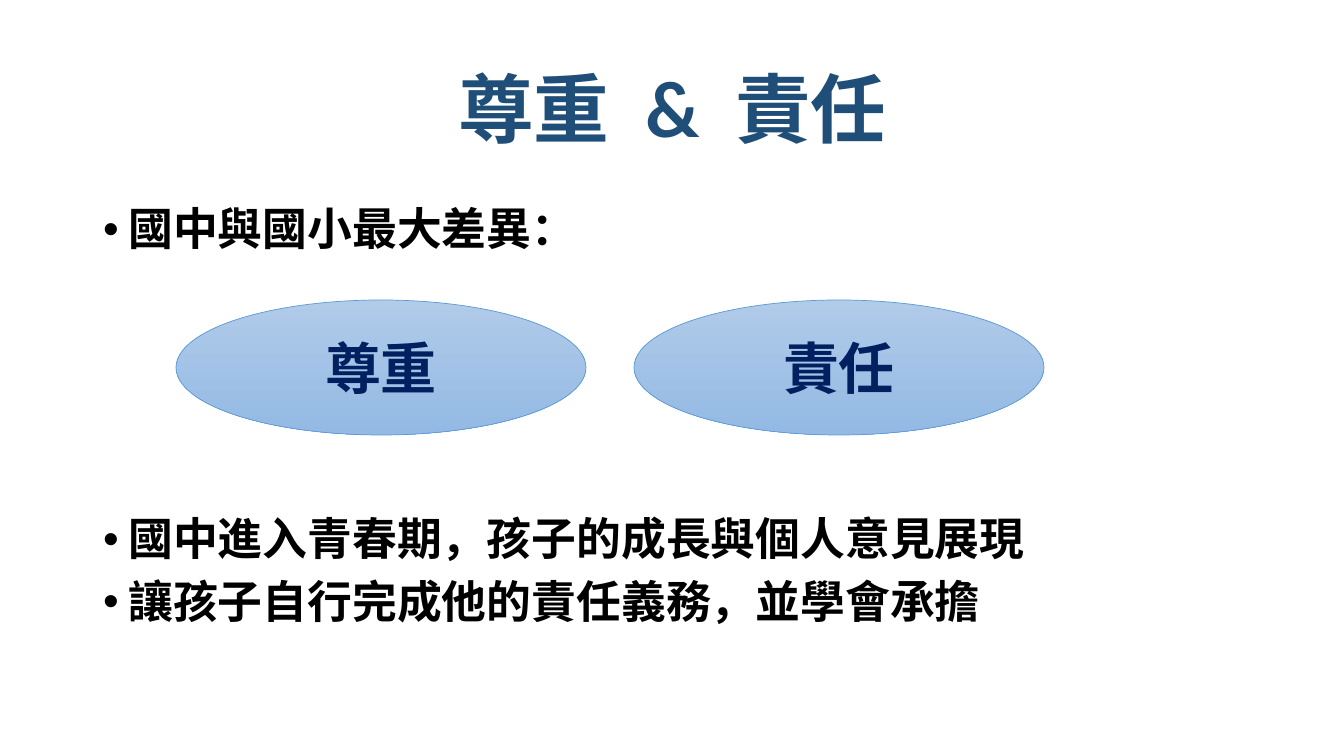
from lxml import etree
from pptx import Presentation
from pptx import util as u
from pptx.dml.color import RGBColor
from pptx.enum import shapes, text
from pptx.oxml.ns import qn

EMU_PER_PX = 12192000 / 1344
COLORS = {
    "title": "1F4E79",
    "body": "000000",
    "label": "002060",
    "outline": "5B9BD5",
    "fill_top": "B1CBE9",
    "fill_bottom": "93B9E4",
}
BULLETS = [
    ("國中與國小最大差異：", 0),
    ("國中進入青春期，孩子的成長與個人意見展現", 187),
    ("讓孩子自行完成他的責任義務，並學會承擔", 10),
]
VALUES = [("尊重", "Calibri"), ("責任", "Arial")]
OVAL_LEFT, OVAL_TOP, OVAL_WIDTH, OVAL_HEIGHT, OVAL_STEP = 176, 300, 410, 135, 458


def px(length):
    return u.Emu(round(length * EMU_PER_PX))


def color(name):
    return RGBColor.from_string(COLORS[name])


def place(box, left, top, width, height):
    box.left, box.top, box.width, box.height = map(px, (left, top, width, height))


def style_span(span, size, font_name, color_name):
    """Format a run, with the same font for Latin and East Asian letters."""
    span.font.size = u.Pt(size)
    span.font.bold = True
    span.font.color.rgb = color(color_name)
    span.font.name = font_name
    east_asian = etree.Element(qn("a:ea"), typeface=font_name)
    span.font._element.find(qn("a:latin")).addnext(east_asian)


def add_bullet(para):
    properties = para._p.get_or_add_pPr()
    properties.set("marL", str(u.Inches(0.25)))
    properties.set("indent", str(-u.Inches(0.25)))
    etree.SubElement(properties, qn("a:buFont"), typeface="Arial")
    etree.SubElement(properties, qn("a:buChar"), char="•")


def fill_title(title):
    place(title, 93, 40, 1159, 146)
    frame = title.text_frame
    frame.vertical_anchor = text.MSO_ANCHOR.MIDDLE
    para = frame.paragraphs[0]
    para.alignment = text.PP_ALIGN.CENTER
    para.line_spacing = 0.9
    for part in ("尊重", " ", "&", " ", "責任"):
        span = para.add_run()
        span.text = part
        style_span(span, 54, "Lato" if part == "&" else "Roboto", "title")
        if part == " ":
            span.font._element.set("spc", "1200")


def fill_body(body):
    place(body, 93, 202, 1159, 535)
    frame = body.text_frame
    frame.auto_size = text.MSO_AUTO_SIZE.NONE
    frame.text = "\n".join(line for line, _ in BULLETS)
    for para, (_, space_before) in zip(frame.paragraphs, BULLETS):
        add_bullet(para)
        para.line_spacing = 0.9
        para.space_before = u.Pt(space_before)
        style_span(para.runs[0], 32, "Roboto", "body")


def add_oval(page, left, label, font_name):
    oval = page.shapes.add_shape(
        shapes.MSO_SHAPE.OVAL,
        *map(px, (left, OVAL_TOP, OVAL_WIDTH, OVAL_HEIGHT)))
    oval.shadow.inherit = False
    oval.fill.gradient()
    oval.fill.gradient_angle = 270
    for stop, name in zip(oval.fill.gradient_stops, ("fill_top", "fill_bottom")):
        stop.color.rgb = color(name)
        stop.position = 0 if name == "fill_top" else 1
    oval.line.color.rgb = color("outline")
    oval.line.width = u.Pt(0.5)
    frame = oval.text_frame
    frame.text = label
    frame.vertical_anchor = text.MSO_ANCHOR.MIDDLE
    para = frame.paragraphs[0]
    para.alignment = text.PP_ALIGN.CENTER
    style_span(para.runs[0], 40, font_name, "label")


def main():
    deck = Presentation()
    deck.slide_width, deck.slide_height = px(1344), px(756)
    page = deck.slides.add_slide(deck.slide_layouts[1])
    fill_title(page.shapes.title)
    fill_body(page.placeholders[1])
    for index, (label, font_name) in enumerate(VALUES):
        add_oval(page, OVAL_LEFT + index * OVAL_STEP, label, font_name)
    deck.save("out.pptx")


if __name__ == "__main__":
    main()
